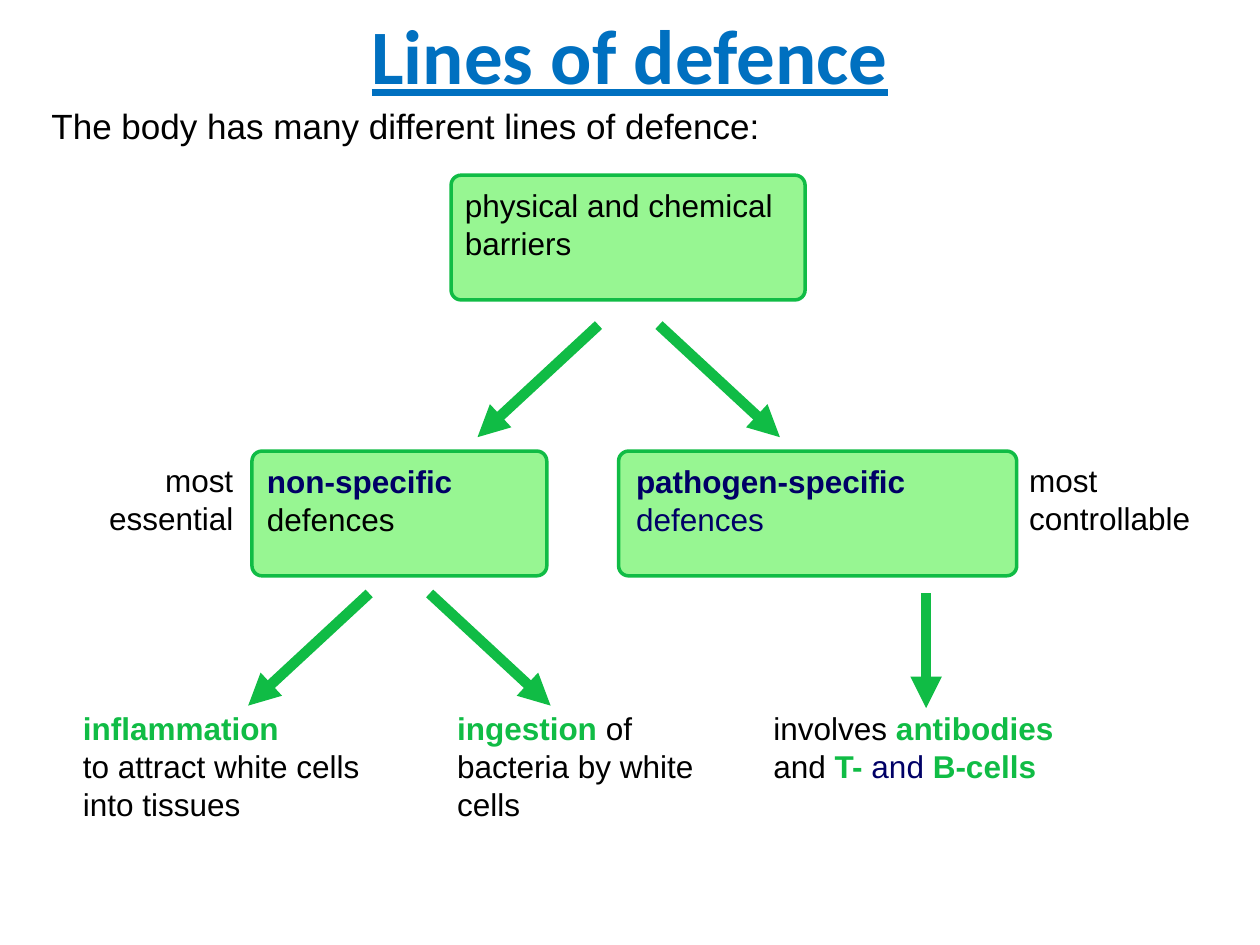
from lxml.etree import SubElement
from pptx import Presentation
from pptx.dml.color import RGBColor
from pptx.enum.shapes import MSO_CONNECTOR, MSO_SHAPE
from pptx.enum.text import MSO_ANCHOR, PP_ALIGN
from pptx.oxml.ns import qn
from pptx.util import Inches, Pt

BLACK, NAVY, BLUE = "000000", "000066", "0070C0"
GREEN, PALE_GREEN = "10BC45", "97F692"

# Text is a list of paragraphs; a paragraph is a list of (words, colour, bold).
# "\n" at the end of words is a line break.
HEADING = [[("Lines of defence", BLUE, True)]]
INTRO = [[("The body has many different lines of defence:", BLACK, False)]]

# left, top, width, height of the box; left and width of its text; text
DEFENCE_BOXES = [
    ((3.58, 1.39, 2.81, 0.99), (3.59, 2.79),
     [[("physical and chemical barriers", BLACK, False)]]),
    ((2, 3.58, 2.34, 0.99), (2.02, 2.29),
     [[("non-specific\n", NAVY, True), ("defences", BLACK, False)]]),
    ((4.91, 3.58, 3.16, 0.99), (4.95, 3.07),
     [[("pathogen-specific", NAVY, True), (" defences", NAVY, False)]]),
]

# left, top, width, height; alignment; text
LABELS = [
    ((0.34, 3.61, 1.61, 0.9), PP_ALIGN.RIGHT,
     [[("most essential", BLACK, False)]]),
    ((8.07, 3.61, 1.93, 0.9), PP_ALIGN.LEFT,
     [[("most", BLACK, False)], [("controllable", BLACK, False)]]),
    ((0.56, 5.58, 2.67, 1.3), PP_ALIGN.LEFT,
     [[("inflammation\n", GREEN, True),
       ("to attract white cells into tissues", BLACK, False)]]),
    ((3.53, 5.58, 2.13, 1.3), PP_ALIGN.LEFT,
     [[("ingestion ", GREEN, True),
       ("of bacteria by white cells", BLACK, False)]]),
    ((6.04, 5.58, 2.6, 1.3), PP_ALIGN.LEFT,
     [[("involves ", BLACK, False), ("antibodies ", GREEN, True),
       ("and ", BLACK, False), ("T- ", GREEN, True),
       ("and ", NAVY, False), ("B-cells", GREEN, True)]]),
]

# A fork is a mirrored pair of arrows: centre x, top y
FORKS = [(4.99, 2.58), (3.17, 4.71)]
FORK_GAP, FORK_REACH, FORK_DROP = 0.24, 0.96, 0.89
ANTIBODY_ARROW = (7.35, 4.71, 7.35, 5.62)


def rgb(colour):
    return RGBColor.from_string(colour)


def add_text(slide, place, paragraphs, font="Arial", size=18,
             align=PP_ALIGN.LEFT, anchor=MSO_ANCHOR.TOP, underline=False):
    frame = slide.shapes.add_textbox(*map(Inches, place)).text_frame
    frame.word_wrap = True
    frame.vertical_anchor = anchor
    for number, pieces in enumerate(paragraphs):
        paragraph = frame.add_paragraph() if number else frame.paragraphs[0]
        paragraph.alignment = align
        for words, colour, bold in pieces:
            run = paragraph.add_run()
            run.text = words.rstrip("\n")
            run.font.name = font
            run.font.size = Pt(size)
            run.font.bold = bold
            run.font.underline = underline
            run.font.color.rgb = rgb(colour)
            if words.endswith("\n"):
                paragraph.add_line_break()


def add_defence_box(slide, place, text_span, paragraphs):
    box = slide.shapes.add_shape(MSO_SHAPE.ROUNDED_RECTANGLE,
                                 *map(Inches, place))
    box.adjustments[0] = 0.08
    box.shadow.inherit = False
    box.fill.solid()
    box.fill.fore_color.rgb = rgb(PALE_GREEN)
    box.line.color.rgb = rgb(GREEN)
    box.line.width = Pt(2)
    text_left, text_width = text_span
    add_text(slide, (text_left, place[1] + 0.04, text_width, 0.9), paragraphs)


def add_arrow(slide, *ends):
    arrow = slide.shapes.add_connector(MSO_CONNECTOR.STRAIGHT,
                                       *map(Inches, ends))
    arrow.line.color.rgb = rgb(GREEN)
    arrow.line.width = Pt(6)
    SubElement(arrow.line._get_or_add_ln(), qn("a:tailEnd"), type="triangle")
    SubElement(arrow._element.spPr, qn("a:effectLst"))


def main():
    deck = Presentation()
    deck.slide_width, deck.slide_height = Inches(10), Inches(7.5)
    slide = deck.slides.add_slide(deck.slide_layouts[6])

    add_text(slide, (0.5, 0, 9, 0.86), HEADING, font="Calibri", size=44,
             align=PP_ALIGN.CENTER, anchor=MSO_ANCHOR.MIDDLE, underline=True)
    add_text(slide, (0.31, 0.78, 9.38, 0.44), INTRO, size=20)
    for place, text_span, paragraphs in DEFENCE_BOXES:
        add_defence_box(slide, place, text_span, paragraphs)
    for place, align, paragraphs in LABELS:
        add_text(slide, place, paragraphs, align=align)

    for centre, top in FORKS:
        for side in (-1, 1):
            start = centre + side * FORK_GAP
            add_arrow(slide, start, top,
                      start + side * FORK_REACH, top + FORK_DROP)
    add_arrow(slide, *ANTIBODY_ARROW)

    deck.save("out.pptx")


if __name__ == "__main__":
    main()
